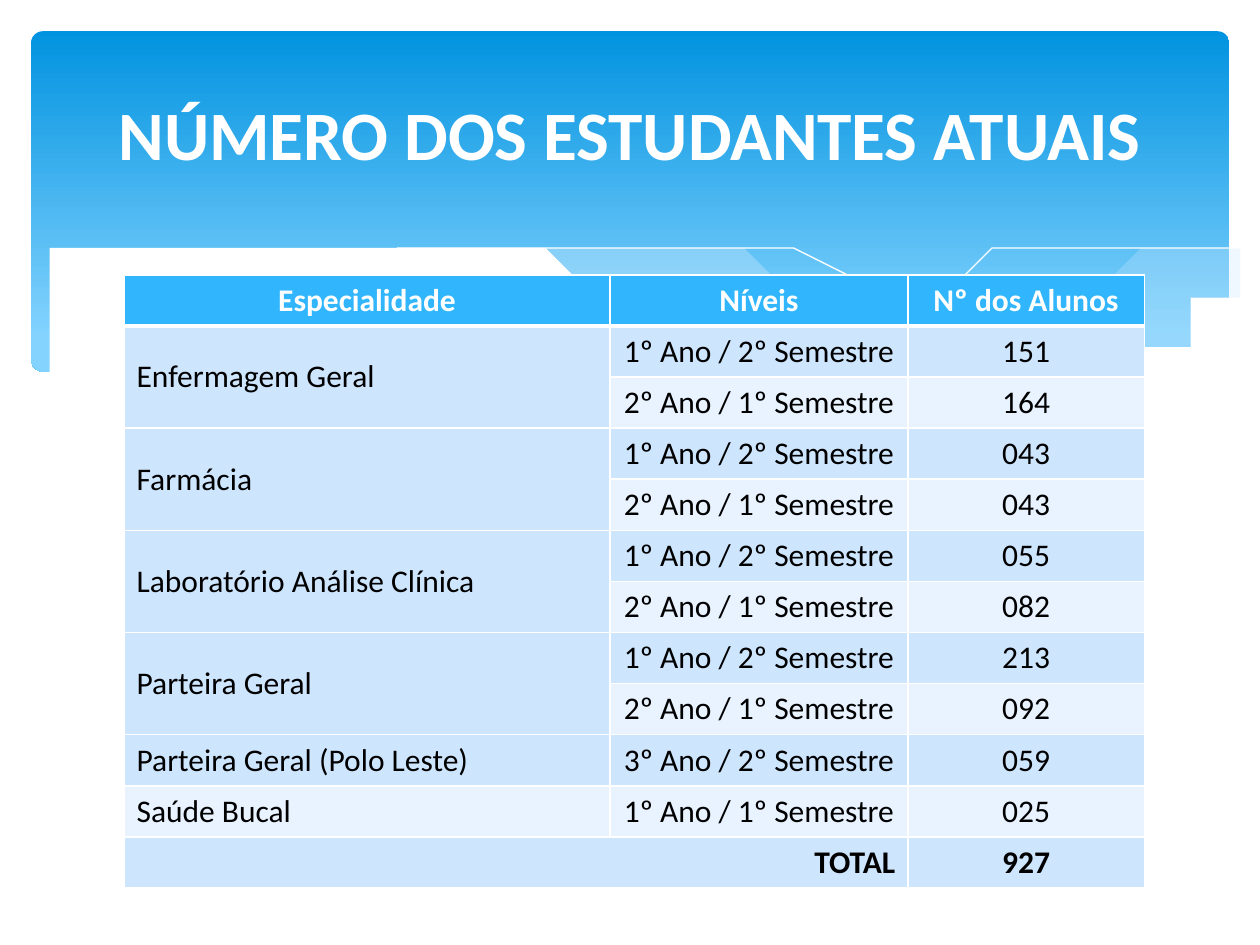
from lxml.etree import SubElement
from pptx import Presentation
from pptx.dml.color import RGBColor
from pptx.enum.shapes import MSO_SHAPE as Preset
from pptx.enum.text import MSO_ANCHOR as Anchor, PP_ALIGN as Align
from pptx.oxml.ns import qn
from pptx.util import Cm, Pt


def color(hex_code):
    return RGBColor.from_string(hex_code)


def format_text(frame, align, size, hex_code, bold):
    frame.vertical_anchor = Anchor.MIDDLE
    para = frame.paragraphs[0]
    para.alignment = align
    for span in para.runs:
        span.font.name = "Calibri"
        span.font.size = Pt(size)
        span.font.bold = bold
        span.font.color.rgb = color(hex_code)


deck = Presentation()
deck.slide_width, deck.slide_height = Cm(25.4), Cm(19.05)
page = deck.slides.add_slide(deck.slide_layouts[5])

# Banner
banner = page.shapes.add_shape(Preset.ROUNDED_RECTANGLE, Cm(0.63), Cm(0.63), Cm(24.15), Cm(6.86))
banner.adjustments[0] = 0.034
banner.shadow.inherit = False
banner.line.fill.background()
banner.fill.gradient()
banner.fill.gradient_angle = 270
for stop, (position, hex_code) in zip(banner.fill.gradient_stops, [(0, "0293E0"), (0.9, "83D3FE")]):
    stop.position = position
    stop.color.rgb = color(hex_code)

# Waves, back to front: points in cm, fill colour, opacity in percent
right_wave = [
    (24.78, 5.08), (23.74, 5.26), (22.63, 5.49), (21.87, 5.66), (20.45, 6.02), (19.13, 6.3),
    (17.93, 6.53), (16.79, 6.73), (17.91, 6.88), (18.92, 6.98), (19.84, 7.04), (20.68, 7.06),
    (21.44, 7.03), (22.15, 6.96), (22.78, 6.86), (23.39, 6.73), (23.93, 6.58), (24.46, 6.4),
    (24.78, 6.27)]
middle_wave = [
    (22.68, 6.93), (21.26, 6.73), (19.69, 6.45), (17.93, 6.1), (15.98, 5.64), (14.83, 5.36),
    (13.74, 5.16), (12.75, 4.98), (11.81, 4.85), (10.67, 4.72), (9.65, 4.7), (8.74, 4.72),
    (7.95, 4.78), (7.26, 4.85), (8.69, 5.05), (9.73, 5.26), (10.85, 5.49), (12.47, 5.89),
    (14.38, 6.3), (15.7, 6.55), (16.89, 6.76), (18.01, 6.91), (19, 7.01), (19.94, 7.06),
    (20.78, 7.06), (21.54, 7.04), (22.25, 6.98)]
left_curve = [
    (7.85, 4.95), (8.33, 4.88), (8.97, 4.8), (9.83, 4.75), (11, 4.75), (12.42, 4.83),
    (14.12, 5), (16.15, 5.28), (17.65, 5.56), (19.3, 5.92), (21.11, 6.38), (23.04, 6.91)]
right_curve = [
    (15.57, 6.53), (17.07, 6.12), (19, 5.66), (20.47, 5.33), (22, 5.05), (23.1, 4.88),
    (24.16, 4.75), (24.77, 4.7)]
white_wave = [
    (24.82, 6.25), (24.36, 6.43), (23.88, 6.58), (23.11, 6.78), (22.23, 6.93), (21.26, 7.01),
    (20.55, 7.04), (19.76, 7.01), (18.9, 6.96), (17.98, 6.86), (16.97, 6.73), (15.9, 6.55),
    (14.71, 6.35), (13.44, 6.07), (12.07, 5.77), (10.62, 5.41), (9.27, 5.12), (8.03, 4.93),
    (6.88, 4.78), (5.84, 4.7), (4.9, 4.67), (4.09, 4.68), (3.35, 4.72), (2.69, 4.8),
    (2.16, 4.9), (1.7, 5), (1.32, 5.11), (1.02, 5.21), (0.74, 5.33), (0.58, 5.41),
    (0.58, 8.36), (24.82, 8.36)]
waves = [
    (right_wave, "C6E7FC", 29),
    (middle_wave, "C6E7FC", 40),
    (left_curve, None, 100),
    (right_curve, None, 100),
    (white_wave, "FFFFFF", 100),
]
for points, fill_color, opacity in waves:
    builder = page.shapes.build_freeform(*points[0], scale=Cm(1))
    builder.add_line_segments(points[1:], close=fill_color is not None)
    wave = builder.convert_to_shape()
    wave.shadow.inherit = False
    if fill_color is None:
        wave.fill.background()
        wave.line.color.rgb = color("FFFFFF")
        wave.line.width = Pt(0)
        continue
    wave.line.fill.background()
    wave.fill.solid()
    wave.fill.fore_color.rgb = color(fill_color)
    if opacity < 100:
        shade = wave.element.spPr.find(qn("a:solidFill")).find(qn("a:srgbClr"))
        SubElement(shade, qn("a:alpha"), val=str(opacity * 1000))

# Table of students
rows = [
    ("Especialidade", "Níveis", "Nº dos Alunos"),
    ("Enfermagem Geral", "1º Ano / 2º Semestre", "151"),
    ("", "2º Ano / 1º Semestre", "164"),
    ("Farmácia", "1º Ano / 2º Semestre", "043"),
    ("", "2º Ano / 1º Semestre", "043"),
    ("Laboratório Análise Clínica", "1º Ano / 2º Semestre", "055"),
    ("", "2º Ano / 1º Semestre", "082"),
    ("Parteira Geral", "1º Ano / 2º Semestre", "213"),
    ("", "2º Ano / 1º Semestre", "092"),
    ("Parteira Geral (Polo Leste)", "3º Ano / 2º Semestre", "059"),
    ("Saúde Bucal", "1º Ano / 1º Semestre", "025"),
    ("TOTAL", "", "927"),
]
last = len(rows) - 1
widths = [9.8, 6, 4.77]
row_height = 1.03
table = page.shapes.add_table(len(rows), len(widths), Cm(2.5), Cm(5.54),
                              Cm(sum(widths)), Cm(row_height * len(rows))).table
for column, width in zip(table.columns, widths):
    column.width = Cm(width)

for r, values in enumerate(rows):
    table.rows[r].height = Cm(row_height)
    for c, value in enumerate(values):
        cell = table.cell(r, c)
        cell.text = value
        if r == 0:
            fill_color, text_color = "31B6FD", "FFFFFF"
        else:
            fill_color, text_color = ("CEE5FE" if r % 2 else "E8F3FF"), "000000"
        if c > 0 or r == 0:
            align = Align.CENTER
        else:
            align = Align.RIGHT if r == last else Align.LEFT
        format_text(cell.text_frame, align, 18, text_color, r in (0, last))
        cell.vertical_anchor = Anchor.MIDDLE

        properties = cell._tc.get_or_add_tcPr()
        for side in "LRTB":
            thick = (r, side) in [(0, "B"), (1, "T")]
            border = SubElement(properties, qn(f"a:ln{side}"), w=str(Pt(3 if thick else 1)))
            SubElement(SubElement(border, qn("a:solidFill")), qn("a:srgbClr"), val="FFFFFF")
        cell.fill.solid()
        cell.fill.fore_color.rgb = color(fill_color)

for top in range(1, 9, 2):
    table.cell(top, 0).merge(table.cell(top + 1, 0))
table.cell(last, 0).merge(table.cell(last, 1))

# Title, brought in front of the banner
title = page.shapes.title
title.left, title.top, title.width, title.height = Cm(1.27), Cm(0.94), Cm(22.86), Cm(3.48)
title.text_frame.text = "NÚMERO DOS ESTUDANTES ATUAIS"
format_text(title.text_frame, Align.CENTER, 39.6, "FFFFFF", True)
title.element.getparent().append(title.element)

deck.save("out.pptx")
